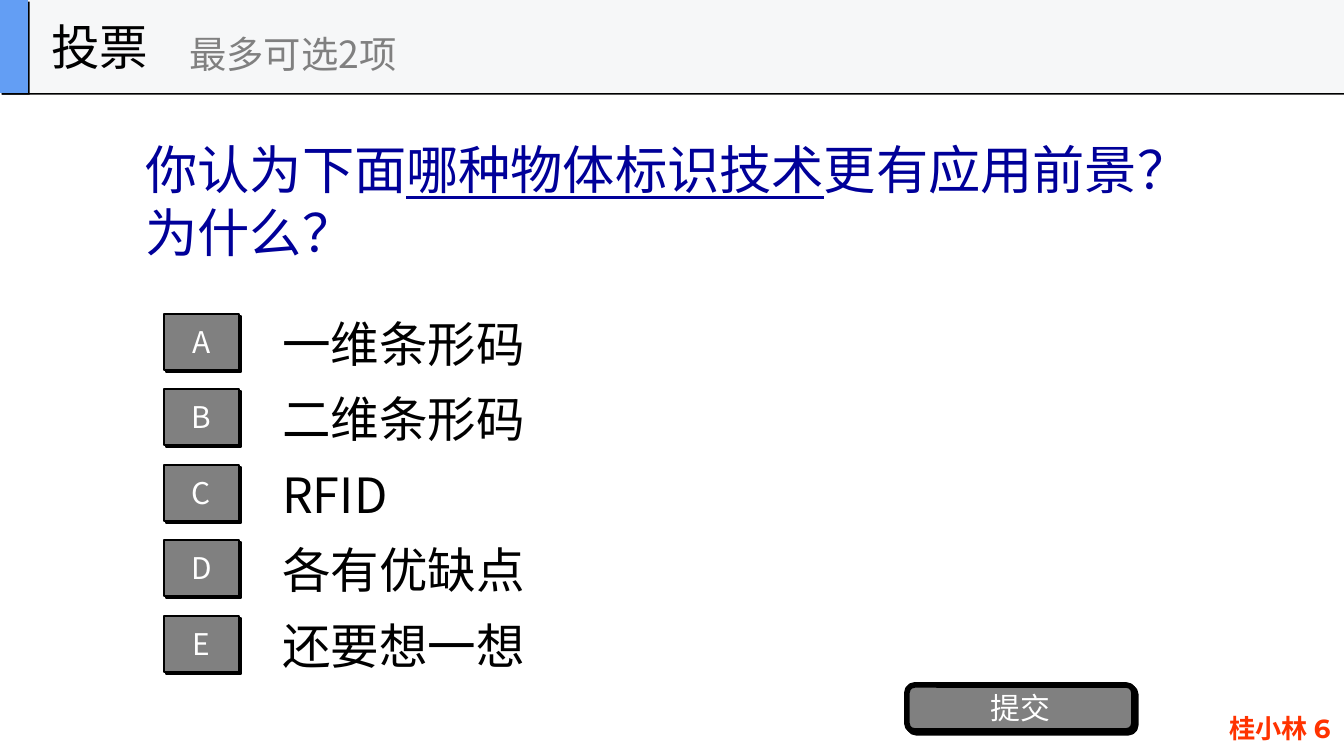
from lxml import etree
from pptx import Presentation
from pptx import util as u
from pptx.dml.color import RGBColor
from pptx.enum import shapes, text
from pptx.oxml import ns

PX = 914400 / 134.4
COLORS = {
    "black": "000000", "white": "FFFFFF", "gray": "808080", "navy": "000099",
    "red": "FF3300", "header": "F6F7F8", "accent": "639EF4",
}
CJK = "Noto Sans CJK SC"
KIND = shapes.MSO_SHAPE


def write(box, *parts, size, color="black", font=CJK, bold=False,
          align=text.PP_ALIGN.LEFT, anchor=text.MSO_ANCHOR.MIDDLE, spacing=None):
    """Fill the box with one paragraph; every second part is underlined."""
    frame = box.text_frame
    frame.word_wrap = True
    frame.auto_size = text.MSO_AUTO_SIZE.NONE
    frame.vertical_anchor = anchor
    para = frame.paragraphs[0]
    para.alignment = align
    if spacing:
        para.line_spacing = u.Pt(spacing)
    for index, part in enumerate(parts):
        span = para.add_run()
        span.text = part
        span.font.size = u.Pt(size)
        span.font.bold = bold
        span.font.underline = index % 2 == 1
        span.font.color.rgb = RGBColor.from_string(COLORS[color])
        span.font.name = font
        east_asian = etree.SubElement(span.font._element, ns.qn("a:ea"))
        east_asian.set("typeface", CJK)


def add_block(kind, bounds, fill, line_width=0):
    """Add a filled shape with a hard black shadow to the lower right."""
    block = page.shapes.add_shape(kind, *[u.Emu(round(n * PX)) for n in bounds])
    block.fill.solid()
    block.fill.fore_color.rgb = RGBColor.from_string(COLORS[fill])
    if line_width:
        block.line.color.rgb = RGBColor.from_string(COLORS["black"])
        block.line.width = u.Pt(line_width)
    else:
        block.line.fill.background()
    block.shadow.inherit = False
    effects = block._element.spPr.find(ns.qn("a:effectLst"))
    shadow = etree.SubElement(effects, ns.qn("a:outerShdw"), blurRad="0",
                              dist=str(u.Pt(1.4)), dir=str(45 * 60000),
                              algn="ctr", rotWithShape="0")
    etree.SubElement(shadow, ns.qn("a:srgbClr"), val=COLORS["black"])
    return block


deck = Presentation()
deck.slide_width = u.Emu(round(1344 * PX))
deck.slide_height = u.Emu(round(756 * PX))
page = deck.slides.add_slide(deck.slide_layouts[5])

# Header band
add_block(KIND.RECTANGLE, (0, 0, 1344, 93), "header")
add_block(KIND.RECTANGLE, (0, 0, 28, 93), "accent")

# Question
question = page.shapes.title
question.left, question.top, question.width, question.height = [
    u.Emu(round(n * PX)) for n in (132, 82, 1075, 236)]
write(question, "你认为下面", "哪种物体标识技术", "更有应用前景？为什么？",
      size=28, color="navy", spacing=34)

# Answer keys and plain labels
labels = [
    ((38, 0, 280, 93), "投票", dict(size=26)),
    ((176, 16, 336, 75), "最多可选2项", dict(size=20, color="gray")),
    ((948, 706, 396, 51), "桂小林 6",
     dict(size=14, color="red", font="Montserrat", bold=True,
          align=text.PP_ALIGN.RIGHT, anchor=text.MSO_ANCHOR.TOP)),
]
answers = ["一维条形码", "二维条形码", "RFID", "各有优缺点", "还要想一想"]
for row, (letter, answer) in enumerate(zip("ABCDE", answers)):
    top = 314 + 378 * row // 5
    key = add_block(KIND.RECTANGLE, (164, top, 75, 56), "gray", line_width=1)
    write(key, letter, size=16, color="white", align=text.PP_ALIGN.CENTER)
    labels.append(((269, top - 6, 941, 71), answer, dict(size=26)))

for bounds, wording, style in labels:
    box = page.shapes.add_textbox(*[u.Emu(round(n * PX)) for n in bounds])
    write(box, wording, **style)

# Submit button
button = add_block(KIND.ROUNDED_RECTANGLE, (907, 685, 227, 46), "gray", line_width=3)
write(button, "提交", size=16, color="white", align=text.PP_ALIGN.CENTER)

deck.save("out.pptx")
